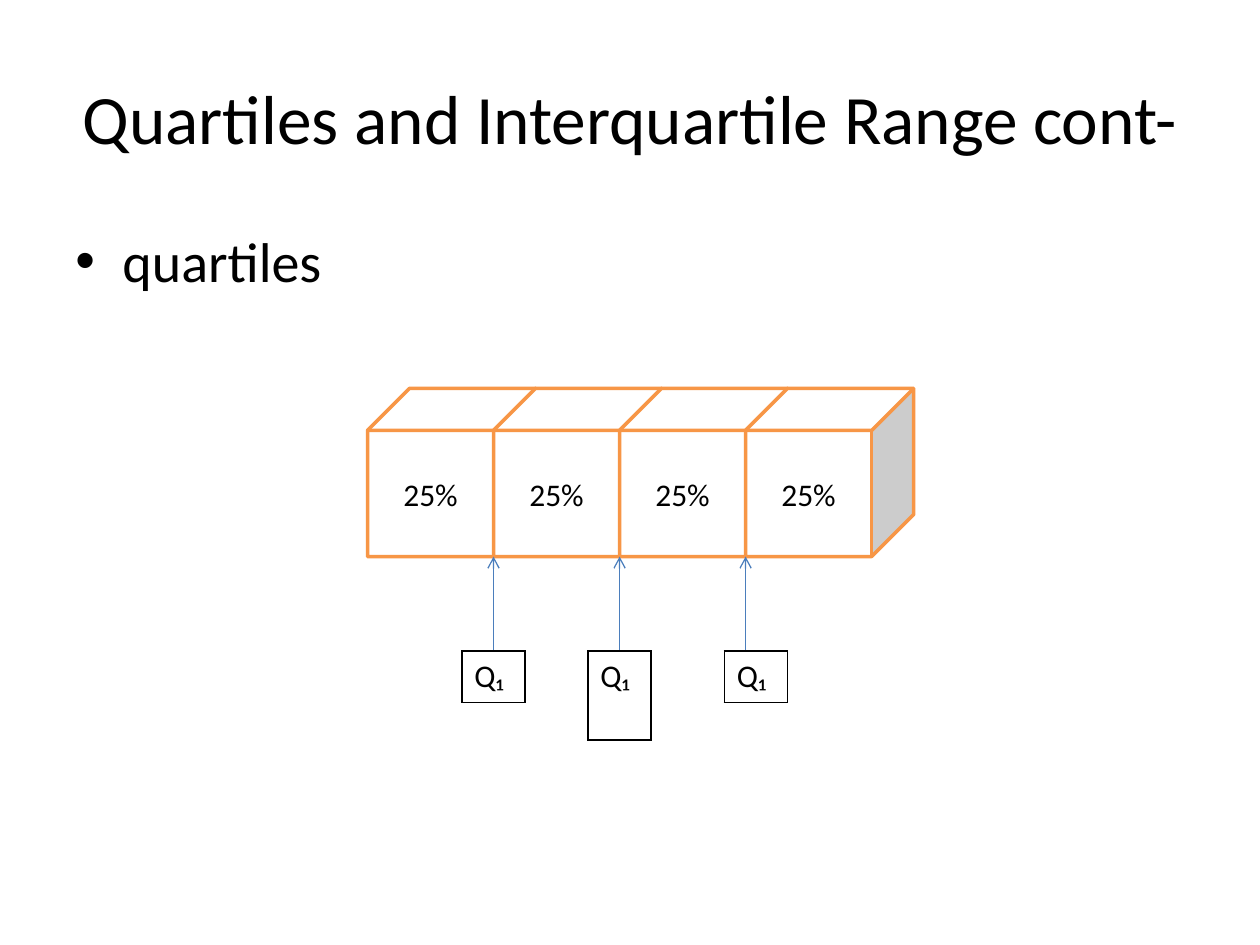
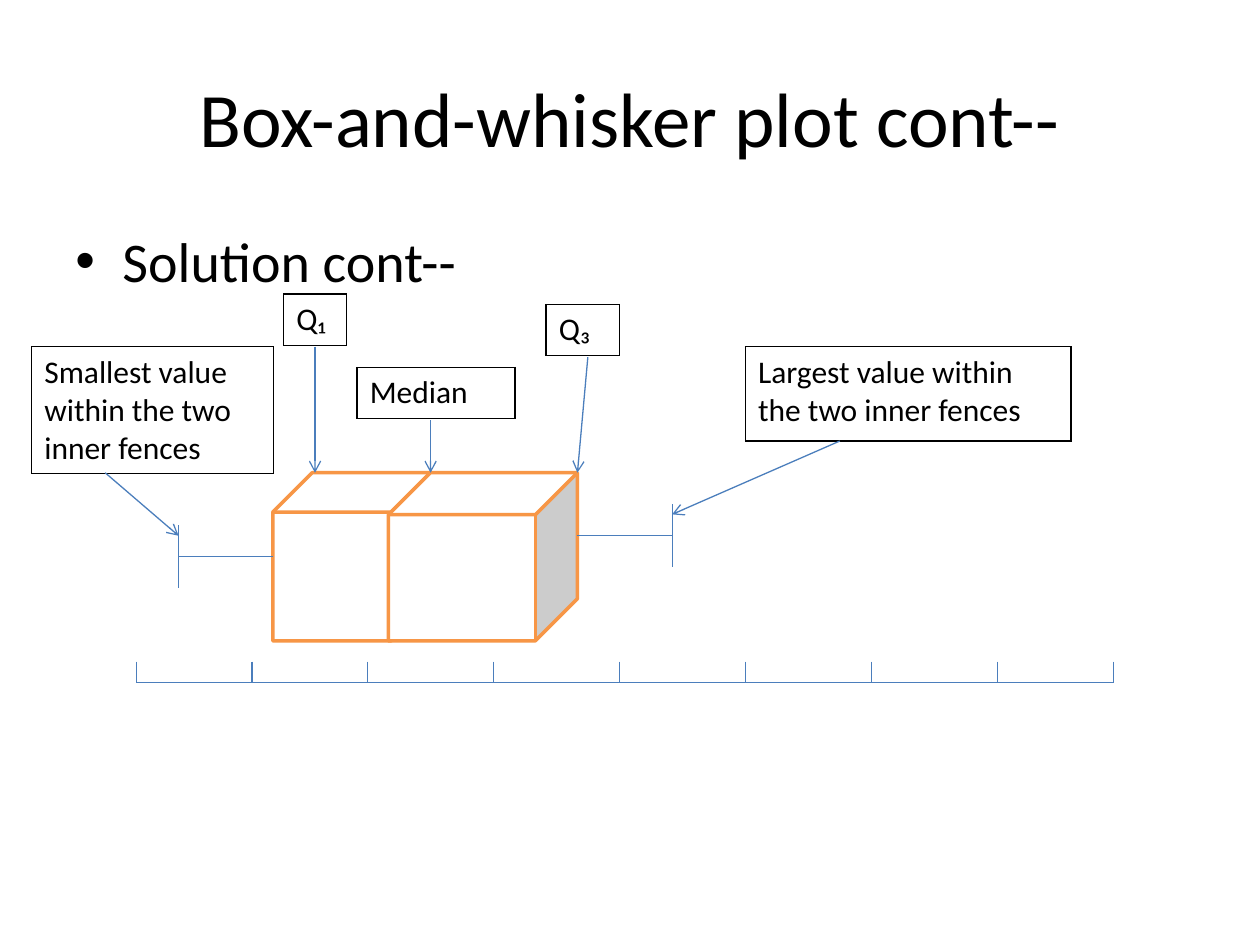
from lxml import etree
from pptx import Presentation
from pptx.dml.color import RGBColor
from pptx.enum.shapes import MSO_CONNECTOR, MSO_SHAPE
from pptx.enum.text import MSO_ANCHOR, PP_ALIGN
from pptx.oxml.ns import qn
from pptx.util import Cm, Pt

STRAIGHT = MSO_CONNECTOR.STRAIGHT
CUBE = MSO_SHAPE.CUBE
MIDDLE = MSO_ANCHOR.MIDDLE
CENTER = PP_ALIGN.CENTER

BLACK = RGBColor(0, 0, 0)
WHITE = RGBColor(255, 255, 255)
ORANGE = RGBColor(0xF7, 0x96, 0x46)
BLUE = RGBColor(0x4B, 0x7E, 0xBC)
FONT = "Calibri"
LABEL_SIZE = 18

QUARTILES = {
    "title": "Quartiles and Interquartile Range cont-",
    "title_size": 39.6,
    "bullet": "quartiles",
}
QUARTERS = ["25%", "25%", "25%", "25%"]
QUARTILE_MARKS = [("Q₁", 9.31, 1.04), ("Q₁", 11.85, 1.8), ("Q₁", 14.6, 1.04)]

BOX_PLOT = {
    "title": "Box-and-whisker plot cont--",
    "title_size": 44,
    "bullet": "Solution cont--",
}
BOX_PARTS = [(5.5, 9.53, 3.18, 3.39), (7.83, 9.53, 3.81, 3.39)]
AXIS_TICKS = [2.75, 5.08, 7.41, 9.95, 12.49, 15.03, 17.57, 20.11, 22.44]
AXIS_TOP, AXIS_BOTTOM = 13.34, 13.76
WHISKERS = [
    (11.64, 10.8, 13.55, 10.8),
    (13.55, 10.16, 13.55, 11.43),
    (3.6, 11.22, 5.5, 11.22),
    (3.6, 10.59, 3.6, 11.86),
]
PLOT_LABELS = [
    ("Median", 7.2, 7.41, 3.18, 1.03),
    ("Q₃", 11.01, 6.14, 1.48, 1.03),
    ("Q₁", 5.72, 5.93, 1.27, 1.03),
    ("Largest value within the two inner fences", 15.03, 6.99, 6.56, 1.9),
    ("Smallest value\nwithin the two\ninner fences", 0.64, 6.99, 4.87, 2.56),
]
PLOT_ARROWS = [
    (11.85, 7.2, 11.64, 9.53),
    (8.68, 8.47, 8.68, 9.53),
    (6.35, 6.99, 6.35, 9.53),
    (2.12, 9.53, 3.6, 10.8),
    (16.93, 8.89, 13.55, 10.37),
]


def write(frame, text, size, align=None):
    frame.word_wrap = True
    frame.text = text
    for paragraph in frame.paragraphs:
        paragraph.alignment = align
        for run in paragraph.runs:
            run.font.name = FONT
            run.font.size = Pt(size)
            run.font.color.rgb = BLACK


def add_heading(slide, title, title_size, bullet):
    heading = slide.shapes.add_textbox(Cm(1.27), Cm(0.76), Cm(22.86), Cm(3.18))
    heading.text_frame.vertical_anchor = MIDDLE
    write(heading.text_frame, title, title_size, CENTER)

    body = slide.shapes.add_textbox(Cm(1.27), Cm(4.45), Cm(22.86), Cm(12.57))
    write(body.text_frame, bullet, 32)
    properties = body.text_frame.paragraphs[0]._p.get_or_add_pPr()
    properties.set("marL", str(Cm(0.95)))
    properties.set("indent", str(-Cm(0.95)))
    etree.SubElement(properties, qn("a:buFont")).set("typeface", "Arial")
    etree.SubElement(properties, qn("a:buChar")).set("char", "•")


def add_cube(slide, left, top, width, height, text=""):
    cube = slide.shapes.add_shape(CUBE, Cm(left), Cm(top), Cm(width), Cm(height))
    cube.shadow.inherit = False
    cube.fill.solid()
    cube.fill.fore_color.rgb = WHITE
    cube.line.color.rgb = ORANGE
    cube.line.width = Pt(2)
    if text:
        cube.text_frame.vertical_anchor = MIDDLE
        write(cube.text_frame, text, LABEL_SIZE, CENTER)


def add_line(slide, x1, y1, x2, y2, arrow=False):
    line = slide.shapes.add_connector(STRAIGHT, Cm(x1), Cm(y1), Cm(x2), Cm(y2))
    line.line.color.rgb = BLUE
    line.line.width = Pt(0.75)
    if arrow:
        outline = line.line._get_or_add_ln()
        etree.SubElement(outline, qn("a:tailEnd")).set("type", "arrow")
    etree.SubElement(line._element.spPr, qn("a:effectLst"))


def add_label(slide, text, left, top, width, height):
    table = slide.shapes.add_table(
        1, 1, Cm(left), Cm(top), Cm(width), Cm(height)
    ).table
    table.first_row = False
    table.horz_banding = False
    cell = table.cell(0, 0)
    write(cell.text_frame, text, LABEL_SIZE)
    properties = cell._tc.get_or_add_tcPr()
    for side in ("lnL", "lnR", "lnT", "lnB"):
        border = etree.SubElement(properties, qn(f"a:{side}"), w=str(Pt(1)))
        fill = etree.SubElement(border, qn("a:solidFill"))
        etree.SubElement(fill, qn("a:srgbClr"), val=str(BLACK))
    cell.fill.background()


def build_quartiles(slide):
    add_heading(slide, **QUARTILES)
    cube_left, cube_top, cube_size, pitch = 7.41, 7.83, 3.39, 2.54
    label_top = 13.12
    for index, share in enumerate(QUARTERS):
        add_cube(slide, cube_left + index * pitch, cube_top, cube_size, cube_size, share)
    for index, (mark, left, height) in enumerate(QUARTILE_MARKS, start=1):
        boundary = cube_left + index * pitch
        add_line(slide, boundary, label_top, boundary, cube_top + cube_size, arrow=True)
        add_label(slide, mark, left, label_top, 1.27, height)


def build_box_plot(slide):
    add_heading(slide, **BOX_PLOT)
    add_line(slide, AXIS_TICKS[0], AXIS_BOTTOM, AXIS_TICKS[-1], AXIS_BOTTOM)
    for tick in AXIS_TICKS:
        add_line(slide, tick, AXIS_TOP, tick, AXIS_BOTTOM)
    for part in BOX_PARTS:
        add_cube(slide, *part)
    for whisker in WHISKERS:
        add_line(slide, *whisker)
    for label in PLOT_LABELS:
        add_label(slide, *label)
    for arrow in PLOT_ARROWS:
        add_line(slide, *arrow, arrow=True)


def main():
    deck = Presentation()
    deck.slide_width, deck.slide_height = Cm(25.4), Cm(19.05)
    blank = deck.slide_layouts[6]
    for build in (build_quartiles, build_box_plot):
        build(deck.slides.add_slide(blank))
    deck.save("out.pptx")


if __name__ == "__main__":
    main()
